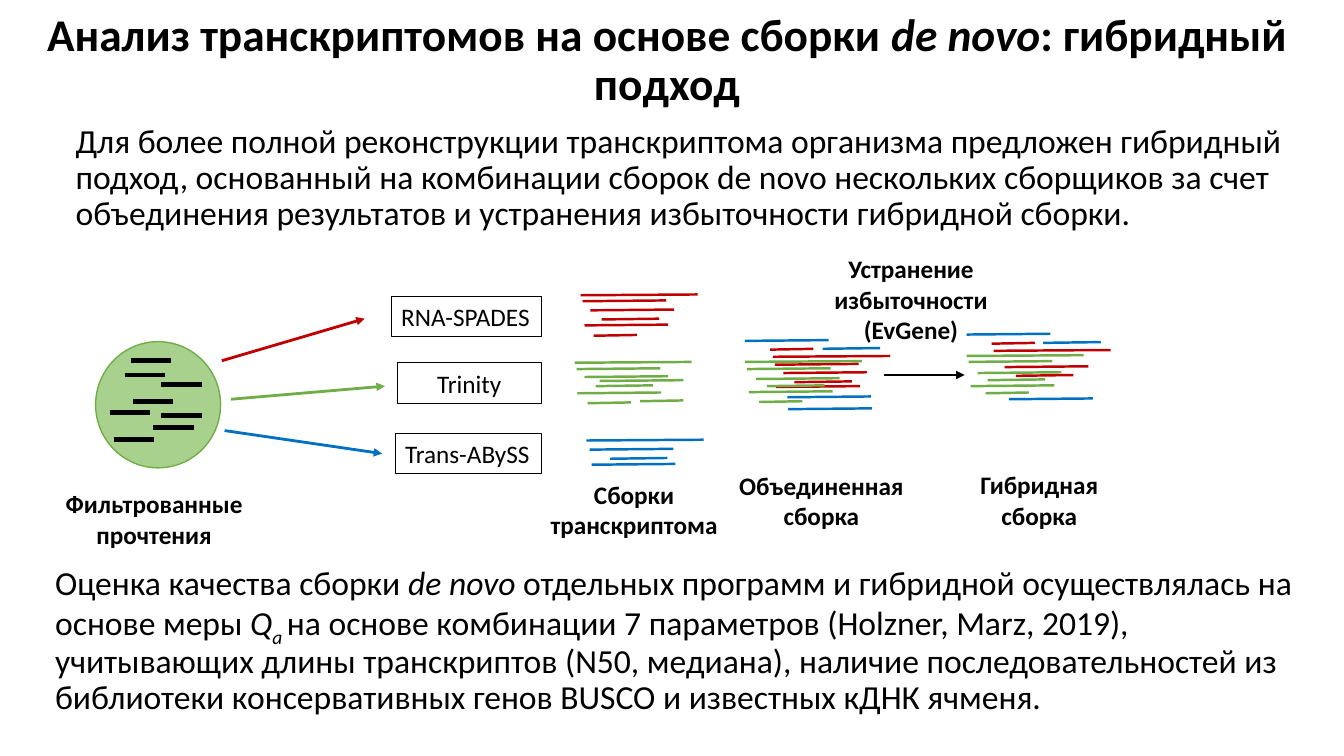
from lxml.etree import SubElement
from pptx import Presentation
from pptx.dml.color import RGBColor
from pptx.enum.shapes import MSO_CONNECTOR, MSO_SHAPE
from pptx.enum.text import MSO_ANCHOR, MSO_AUTO_SIZE, PP_ALIGN
from pptx.oxml.ns import qn
from pptx.util import Cm, Pt

COLORS = {
    "black": "000000",
    "red": "C00000",
    "green": "70AD47",
    "blue": "0070C0",
    "cell": "A9D18E",
}

# Read lengths in cm: long, medium, short, tiny, and unassembled
LENGTHS = {"L": 2.95, "M": 2.11, "S": 1.45, "T": 1.09, "raw": 1.02}
RISE = 0.02

FILTERED_READS = [
    (3.35, 10.11), (3.15, 9.45), (2.77, 10.39), (4.06, 10.46),
    (3.86, 10.77), (2.87, 11.07), (4.06, 9.7), (3.3, 9.09),
]

# Contigs of each stage: colour, then length, left and top of each line
ASSEMBLIES = [
    ("red", [("M", 14.73, 8.2), ("L", 14.63, 7.44), ("M", 14.88, 7.82),
             ("S", 15.16, 8.05), ("M", 14.68, 7.59), ("T", 14.96, 8.46)]),
    ("blue", [("M", 14.91, 11.71), ("L", 14.78, 11.1), ("S", 15.37, 11.56),
              ("M", 14.86, 11.33)]),
    ("green", [("M", 14.55, 9.91), ("L", 14.48, 9.14), ("M", 14.73, 9.5),
               ("S", 15.01, 9.73), ("M", 14.53, 9.3), ("T", 14.81, 10.16),
               ("T", 16.13, 10.11), ("M", 15.11, 9.6)]),
]
MERGED = [
    ("red", [("M", 19.56, 9.75), ("L", 19.48, 8.99), ("M", 19.74, 9.4),
             ("S", 20.02, 9.63), ("M", 19.53, 9.19), ("T", 19.41, 8.81)]),
    ("green", [("M", 18.87, 9.88), ("L", 18.77, 9.12), ("M", 19.05, 9.55),
               ("S", 19.33, 9.73), ("M", 18.82, 9.3), ("T", 19.13, 10.13)]),
    ("blue", [("M", 18.77, 8.59), ("M", 19.86, 10.31), ("S", 20.73, 8.79),
              ("M", 19.84, 10.01)]),
]
HYBRID = [
    ("red", [("L", 25.04, 8.84), ("M", 25.32, 9.25), ("S", 25.6, 9.47),
             ("T", 24.99, 8.66)]),
    ("green", [("M", 24.46, 9.73), ("L", 24.36, 8.97), ("M", 24.64, 9.4),
               ("S", 24.89, 9.58), ("M", 24.41, 9.12), ("T", 24.84, 9.91)]),
    ("blue", [("M", 24.36, 8.43), ("M", 25.43, 10.06), ("S", 26.29, 8.64)]),
]

ARROWS = [
    ("red", 5.59, 9.09, 9.19, 8.03),
    ("green", 5.82, 10.06, 9.7, 9.73),
    ("blue", 5.66, 10.85, 9.63, 11.43),
    ("black", 22.28, 9.45, 24.31, 9.45),
]

ASSEMBLERS = [
    ("RNA-SPADES", 9.86, 7.47, 3.78, PP_ALIGN.LEFT),
    ("Trinity", 10.01, 9.14, 3.63, PP_ALIGN.CENTER),
    ("Trans-ABySS", 9.96, 10.92, 3.68, PP_ALIGN.LEFT),
]

CAPTIONS = [
    (["Фильтрованные прочтения"], 0.99, 12.19, 5.79),
    (["Сборки транскриптома"], 13.54, 11.96, 4.88),
    (["Объединенная сборка"], 18.26, 11.73, 4.88),
    (["Устранение избыточности", "(EvGene)"], 20.52, 6.27, 4.88),
    (["Гибридная сборка"], 23.75, 11.71, 4.88),
]


def rgb(name):
    return RGBColor.from_string(COLORS[name])


def add_text(p, text, size=18, bold=False, italic=False, baseline=None):
    r = p.add_run()
    r.text = text
    r.font.name = "Calibri"
    r.font.size = Pt(size)
    r.font.bold = bold
    r.font.italic = italic
    r.font.color.rgb = rgb("black")
    if baseline:
        r._r.get_or_add_rPr().set("baseline", str(baseline))


def place(sp, left, top, width, height):
    sp.left, sp.top, sp.width, sp.height = map(Cm, (left, top, width, height))


def add_textbox(slide, left, top, width, height):
    tf = slide.shapes.add_textbox(*map(Cm, (left, top, width, height))).text_frame
    tf.word_wrap = True
    return tf


def format_body(p):
    p.line_spacing = 0.9
    p.space_before = Pt(10)
    p.alignment = PP_ALIGN.LEFT


def add_line(slide, color, x1, y1, x2, y2, width, arrow=False):
    line = slide.shapes.add_connector(
        MSO_CONNECTOR.STRAIGHT, *map(Cm, (x1, y1, x2, y2)))
    line.line.color.rgb = rgb(color)
    line.line.width = Pt(width)
    if arrow:
        SubElement(line.line._get_or_add_ln(), qn("a:tailEnd"), type="triangle")
    SubElement(line._element.spPr, qn("a:effectLst"))


def add_contigs(slide, groups):
    for color, contigs in groups:
        for kind, x, y in contigs:
            add_line(slide, color, x, y, x + LENGTHS[kind], y - RISE, 1.75)


def add_assembler(slide, name, left, top, width, align):
    sp = slide.shapes.add_shape(
        MSO_SHAPE.RECTANGLE, *map(Cm, (left, top, width, 1.02)))
    sp.shadow.inherit = False
    sp.fill.background()
    sp.line.color.rgb = rgb("black")
    sp.line.width = Pt(0.75)
    tf = sp.text_frame
    tf.word_wrap = False
    p = tf.paragraphs[0]
    p.alignment = align
    add_text(p, name)


def add_caption(slide, lines, left, top, width):
    tf = add_textbox(slide, left, top, width, 1.8)
    for i, text in enumerate(lines):
        p = tf.add_paragraph() if i else tf.paragraphs[0]
        p.alignment = PP_ALIGN.CENTER
        add_text(p, text, bold=True)


def add_cell(slide):
    sp = slide.shapes.add_shape(
        MSO_SHAPE.OVAL, *map(Cm, (2.41, 8.61, 3.15, 3.18)))
    sp.shadow.inherit = False
    sp.fill.solid()
    sp.fill.fore_color.rgb = rgb("cell")
    sp.line.color.rgb = rgb("green")
    sp.line.width = Pt(1)
    for x, y in FILTERED_READS:
        add_line(slide, "black", x, y, x + LENGTHS["raw"], y, 3.5)


def fill_title(sp):
    place(sp, 0.53, 0.46, 32.56, 2.18)
    tf = sp.text_frame
    tf.auto_size = MSO_AUTO_SIZE.NONE
    tf.vertical_anchor = MSO_ANCHOR.MIDDLE
    p = tf.paragraphs[0]
    p.alignment = PP_ALIGN.CENTER
    p.line_spacing = 0.9
    add_text(p, "Анализ транскриптомов на основе сборки ", size=32.4, bold=True)
    add_text(p, "de novo", size=32.4, bold=True, italic=True)
    add_text(p, ": гибридный подход", size=32.4, bold=True)


def fill_body(sp):
    place(sp, 1.65, 3, 31.83, 3.94)
    tf = sp.text_frame
    tf.auto_size = MSO_AUTO_SIZE.NONE
    p = tf.paragraphs[0]
    format_body(p)
    pPr = p._p.get_or_add_pPr()
    pPr.set("marL", "0")
    pPr.set("indent", "0")
    SubElement(pPr, qn("a:buNone"))
    add_text(p, "Для более полной реконструкции транскриптома организма предложен гибридный подход, основанный на комбинации сборок de novo нескольких сборщиков за счет объединения результатов и устранения избыточности гибридной сборки.", size=24)


def add_quality_note(slide):
    p = add_textbox(slide, 1.14, 14.15, 31.83, 3.94).paragraphs[0]
    format_body(p)
    add_text(p, "Оценка качества сборки ", size=24)
    add_text(p, "de novo ", size=24, italic=True)
    add_text(p, "отдельных программ и гибридной осуществлялась на основе меры ", size=24)
    add_text(p, "Q", size=24, italic=True)
    add_text(p, "a ", size=24, italic=True, baseline=-25000)
    add_text(p, "на основе комбинации 7 параметров (Holzner, Marz, 2019), учитывающих длины транскриптов (N50, медиана), наличие последовательностей из библиотеки консервативных генов BUSCO и известных кДНК ячменя.", size=24)


def main():
    prs = Presentation()
    prs.slide_width, prs.slide_height = Cm(33.87), Cm(19.05)
    slide = prs.slides.add_slide(prs.slide_layouts[1])

    # Heading and introduction
    fill_title(slide.shapes.title)
    fill_body(slide.placeholders[1])

    # Assembly pipeline
    add_cell(slide)
    for assembler in ASSEMBLERS:
        add_assembler(slide, *assembler)
    for stage in (ASSEMBLIES, MERGED, HYBRID):
        add_contigs(slide, stage)
    for arrow in ARROWS:
        add_line(slide, *arrow, width=2, arrow=True)
    for caption in CAPTIONS:
        add_caption(slide, *caption)

    # Quality assessment
    add_quality_note(slide)
    prs.save("out.pptx")


if __name__ == "__main__":
    main()
